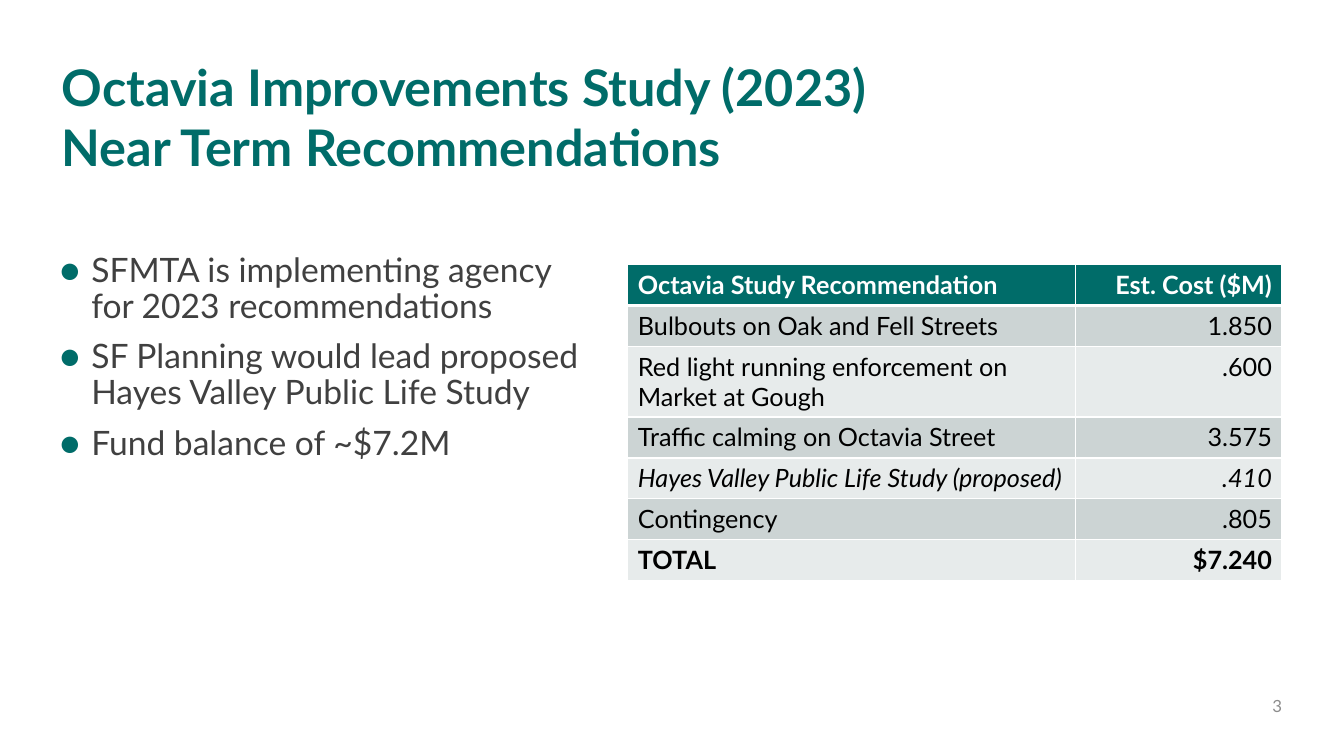
import pptx
import pptx.util
import pptx.dml.color
import pptx.enum.text
import pptx.oxml
import pptx.oxml.ns
from dataclasses import dataclass

PX = 9525  # EMU per px, 96 px to the inch
ALIGN = pptx.enum.text.PP_ALIGN
ANCHOR = pptx.enum.text.MSO_ANCHOR


@dataclass(frozen=True)
class Theme:
    font: str = "Lato"
    teal: str = "006C69"
    body: str = "404040"
    grey: str = "8C8C8C"
    black: str = "000000"
    white: str = "FFFFFF"
    bands: tuple = ("CCD4D4", "E7EBEB")
    title_size: int = 36
    body_size: int = 24
    table_size: int = 18
    number_size: int = 12


theme = Theme()


def write(paragraph, text, *, size, color, bold=False, italic=False, align=ALIGN.LEFT):
    paragraph.text = text
    paragraph.alignment = align
    for run in paragraph.runs:
        run.font.name = theme.font
        run.font.size = pptx.util.Pt(size)
        run.font.bold = bold
        run.font.italic = italic
        run.font.color.rgb = pptx.dml.color.RGBColor.from_string(color)


def text_frame(left, top, width, height, *, inset=(0, 0), anchor=ANCHOR.TOP):
    frame = slide.shapes.add_textbox(left * PX, top * PX, width * PX, height * PX).text_frame
    frame.word_wrap = True
    frame.vertical_anchor = anchor
    frame.margin_left = frame.margin_right = inset[0] * PX
    frame.margin_top = frame.margin_bottom = inset[1] * PX
    return frame


deck = pptx.Presentation()
deck.slide_width, deck.slide_height = 1280 * PX, 720 * PX
slide = deck.slides.add_slide(deck.slide_layouts[6])

# Title
title = text_frame(59, 53, 1122, 120)
write(title.paragraphs[0], "Octavia Improvements Study (2023)\vNear Term Recommendations",
      size=theme.title_size, color=theme.teal, bold=True)

# Key points
points = [
    "SFMTA is implementing agency for 2023 recommendations",
    "SF Planning would lead proposed Hayes Valley Public Life Study",
    "Fund balance of ~$7.2M",
]
key_points = text_frame(46, 236, 527, 440, inset=(10, 5))
for index, point in enumerate(points):
    paragraph = key_points.add_paragraph() if index else key_points.paragraphs[0]
    paragraph.line_spacing = 0.9
    paragraph.space_after = pptx.util.Pt(8)
    if index:
        paragraph.space_before = pptx.util.Pt(2)
    properties = paragraph._p.get_or_add_pPr()
    properties.set("marL", str(31 * PX))
    properties.set("indent", str(-30 * PX))
    ns = pptx.oxml.ns.nsdecls("a")
    for bullet in (f'<a:buClr {ns}><a:srgbClr val="{theme.teal}"/></a:buClr>',
                   f'<a:buFont {ns} typeface="{theme.font}"/>',
                   f'<a:buChar {ns} char="●"/>'):
        properties.append(pptx.oxml.parse_xml(bullet))
    write(paragraph, point, size=theme.body_size, color=theme.body)

# Cost table
costs = [
    ("Octavia Study Recommendation", "Est. Cost ($M)"),
    ("Bulbouts on Oak and Fell Streets", "1.850"),
    ("Red light running enforcement on Market at Gough", ".600"),
    ("Traffic calming on Octavia Street", "3.575"),
    ("Hayes Valley Public Life Study (proposed)", ".410"),
    ("Contingency", ".805"),
    ("TOTAL", "$7.240"),
]
proposed_row, total_row = 4, len(costs) - 1
row_height = 39
cost_table = slide.shapes.add_table(len(costs), 2, 598 * PX, 252 * PX, 623 * PX,
                                    len(costs) * row_height * PX).table
for column, width in zip(cost_table.columns, (426, 197)):
    column.width = width * PX

for r, entries in enumerate(costs):
    cost_table.rows[r].height = row_height * PX
    header = r == 0
    for c, entry in enumerate(entries):
        cell = cost_table.cell(r, c)
        # The rule under the header is heavier than the others
        for side in "LRTB":
            heavy = (header and side == "B") or (r == 1 and side == "T")
            cell._tc.get_or_add_tcPr().append(pptx.oxml.parse_xml(
                f'<a:ln{side} {pptx.oxml.ns.nsdecls("a")} w="{pptx.util.Pt(3 if heavy else 1)}">'
                f'<a:solidFill><a:srgbClr val="{theme.white}"/></a:solidFill></a:ln{side}>'))
        cell.fill.solid()
        cell.fill.fore_color.rgb = pptx.dml.color.RGBColor.from_string(
            theme.teal if header else theme.bands[(r - 1) % 2])
        write(cell.text_frame.paragraphs[0], entry, size=theme.table_size,
              color=theme.white if header else theme.black,
              bold=r in (0, total_row), italic=r == proposed_row,
              align=ALIGN.RIGHT if c else ALIGN.LEFT)

# Slide number
number = text_frame(933, 653, 288, 38, anchor=ANCHOR.MIDDLE)
write(number.paragraphs[0], "3", size=theme.number_size, color=theme.grey, align=ALIGN.RIGHT)

deck.save("out.pptx")
